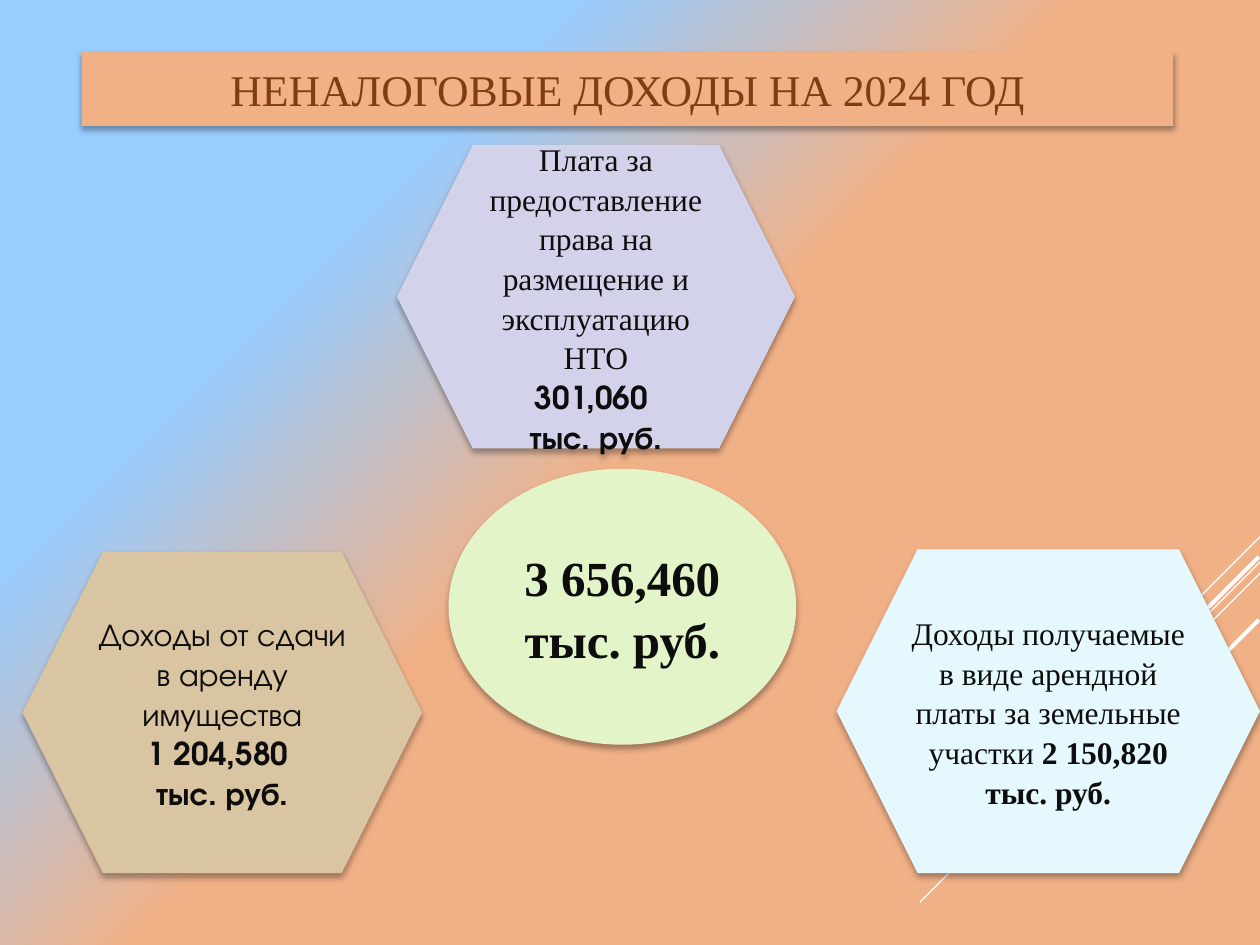
from lxml import etree
from pptx import Presentation, util as u
from pptx.dml.color import RGBColor
from pptx.enum import shapes, text
from pptx.oxml import parse_xml
from pptx.oxml.ns import nsdecls, qn

COLORS = {
    "peach": "F1B187", "sky": "99CCFF", "white": "FFFFFF", "brown": "813C0F",
    "ink": "0D0D0D", "green": "E3F4C9", "ice": "E4F8FD", "lilac": "D2D3EA",
    "sand": "D9C5A1",
}
SERIF, SANS = "Times New Roman", "TeX Gyre Adventor"
KIND = shapes.MSO_SHAPE
SHADOW = (
    f'<a:effectLst {nsdecls("a")}><a:outerShdw blurRad="44450" dist="27940" '
    'dir="5400000" algn="ctr" rotWithShape="0"><a:srgbClr val="000000">'
    '<a:alpha val="32000"/></a:srgbClr></a:outerShdw></a:effectLst>'
)


def rgb(name):
    return RGBColor.from_string(COLORS[name])


def add_figure(kind, place, fill, paragraphs, size, ink="ink", spacing=1.05):
    """Draw a shadowed shape; each paragraph is a list of (text, font, bold)."""
    figure = slide.shapes.add_shape(kind, *[u.Inches(v) for v in place])
    figure.fill.solid()
    figure.fill.fore_color.rgb = rgb(fill)
    figure.line.fill.background()
    figure._element.spPr.append(parse_xml(SHADOW))
    frame = figure.text_frame
    frame.word_wrap = True
    frame.vertical_anchor = text.MSO_ANCHOR.MIDDLE
    for index, spans in enumerate(paragraphs):
        para = frame.add_paragraph() if index else frame.paragraphs[0]
        para.alignment = text.PP_ALIGN.CENTER
        para.line_spacing = spacing
        for words, font, bold in spans:
            span = para.add_run()
            span.text = words
            span.font.name = font
            span.font.size = u.Pt(size)
            span.font.bold = bold
            span.font.color.rgb = rgb(ink)


deck = Presentation()
deck.slide_width, deck.slide_height = u.Inches(10), u.Inches(7.5)
slide = deck.slides.add_slide(deck.slide_layouts[6])

# Diagonal background, sky to peach
background = slide.background.fill
background.gradient()
background.gradient_angle = 315
for stop, (color, position) in zip(background.gradient_stops,
                                   [("sky", 0.26), ("peach", 0.49)]):
    stop.color.rgb = rgb(color)
    stop.position = position

# Decorative 45-degree strokes: right end x, y, run to the left, width
for x, y, run, width in [(10, 4.26, 0.83, 0.75), (10, 4.46, 2.7, 0.75),
                         (10, 4.55, 1.72, 0.75), (9.99, 4.42, 1.57, 2.25),
                         (9.99, 4.92, 1.14, 2.25)]:
    stroke = slide.shapes.add_connector(
        shapes.MSO_CONNECTOR.STRAIGHT, u.Inches(x), u.Inches(y),
        u.Inches(x - run), u.Inches(y + run))
    stroke.line.color.rgb = rgb("white")
    stroke.line.width = u.Pt(width)
    etree.SubElement(stroke._element.spPr, qn("a:effectLst"))

add_figure(KIND.RECTANGLE, (0.65, 0.41, 8.66, 0.59), "peach",
           [[("НЕНАЛОГОВЫЕ ДОХОДЫ НА 2024 ГОД", SERIF, False)]],
           25, "brown", 1.0)
add_figure(KIND.OVAL, (3.56, 3.72, 2.76, 2.19), "green",
           [[("3 656,460 тыс. руб.", SERIF, True)]], 28)

income_sources = [
    ((6.64, 4.36, 3.36, 2.57), "ice",
     [[("Доходы получаемые в виде арендной платы за земельные участки ",
        SERIF, False), ("2 150,820 тыс. руб.", SERIF, True)]]),
    ((3.15, 1.15, 3.16, 2.41), "lilac",
     [[("Плата за предоставление права на размещение и эксплуатацию НТО",
        SERIF, False)],
      [("301,060 ", SANS, True)], [("тыс. руб.", SANS, True)]]),
    ((0.18, 4.38, 3.17, 2.55), "sand",
     [[("Доходы от сдачи в аренду имущества", SANS, False)],
      [("1 204,580 ", SANS, True)], [("тыс. руб.", SANS, True)]]),
]
for place, fill, paragraphs in income_sources:
    add_figure(KIND.HEXAGON, place, fill, paragraphs, 18)

deck.save("out.pptx")
